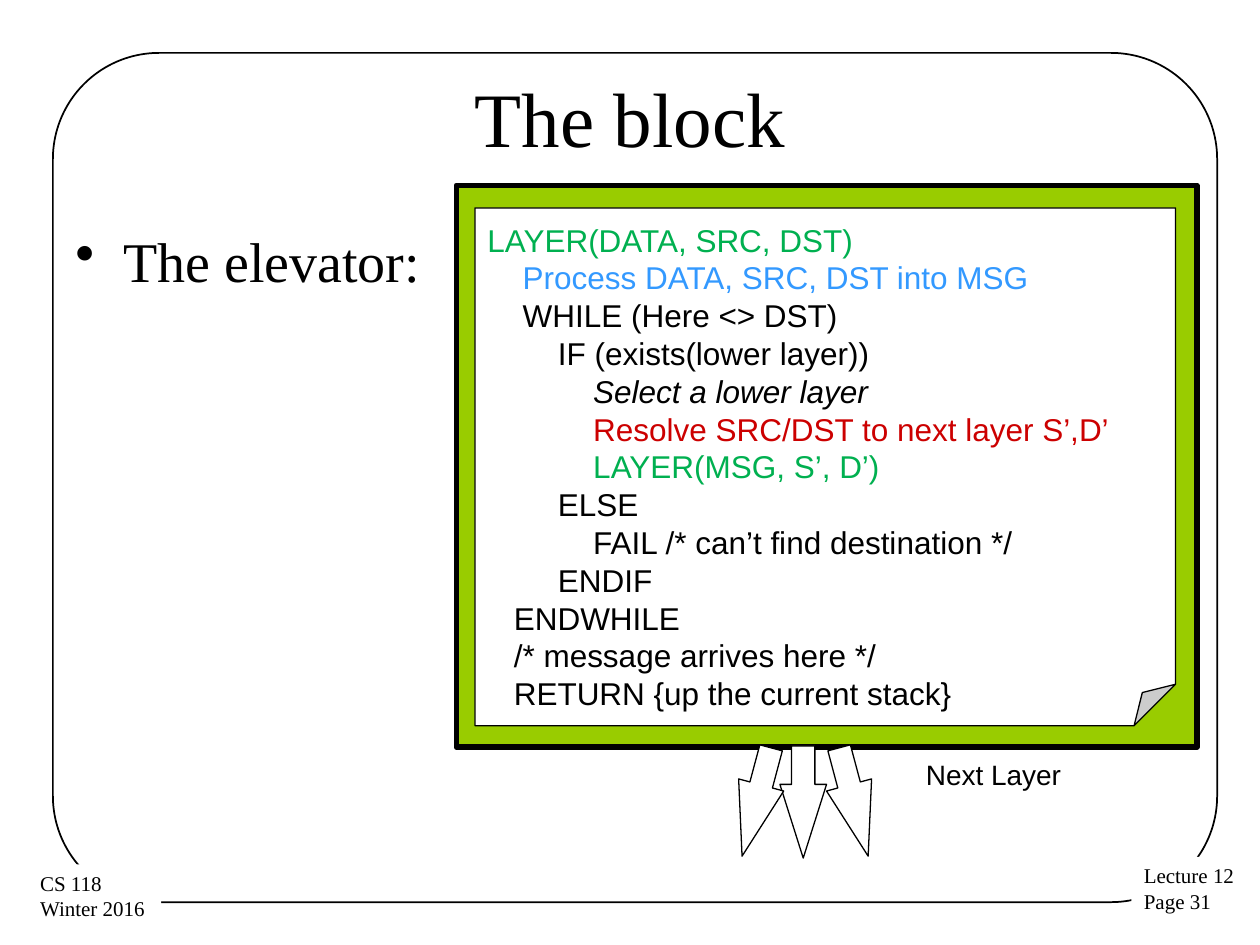
from lxml.etree import SubElement
from pptx import Presentation
from pptx.dml.color import RGBColor
from pptx.enum.shapes import MSO_SHAPE as Shape
from pptx.enum.text import MSO_ANCHOR as Anchor, PP_ALIGN as Align
from pptx.oxml.ns import qn
from pptx.util import Inches, Pt

BLACK = RGBColor(0x00, 0x00, 0x00)
WHITE = RGBColor(0xFF, 0xFF, 0xFF)
LIME = RGBColor(0x99, 0xCC, 0x00)
GREEN = RGBColor(0x00, 0xB0, 0x50)
BLUE = RGBColor(0x33, 0x99, 0xFF)
RED = RGBColor(0xCC, 0x00, 0x00)

SERIF = {"name": "Times New Roman", "color": BLACK}
SANS = {"name": "Arial", "color": BLACK}
SPACE_WIDTH = 0.07

PSEUDOCODE = [
    (0, "LAYER(DATA, SRC, DST)", {"color": GREEN}),
    (4, "Process DATA, SRC, DST into MSG", {"color": BLUE}),
    (4, "WHILE (Here <> DST)", {}),
    (8, "IF (exists(lower layer))", {}),
    (12, "Select a lower layer", {"italic": True}),
    (12, "Resolve SRC/DST to next layer S’,D’", {"color": RED}),
    (12, "LAYER(MSG, S’, D’)", {"color": GREEN}),
    (8, "ELSE", {}),
    (12, "FAIL /* can’t find destination */", {}),
    (8, "ENDIF", {}),
    (3, "ENDWHILE", {}),
    (3, "/* message arrives here */", {}),
    (3, "RETURN {up the current stack}", {}),
]
FOOTERS = [
    ((8.98, 6.8, 0.93, 0.51), ["Lecture 12", "Page 31"]),
    ((0.22, 6.86, 1.06, 0.51), ["CS 118", "Winter 2016"]),
]
ARROWS = [(6.19, 0), (5.82, 15), (6.59, 345)]


def set_guides(panel, guides):
    """Write the adjustment guides of a preset shape."""
    guide_list = panel._element.spPr.find(qn("a:prstGeom")).get_or_add_avLst()
    for old_guide in list(guide_list):
        guide_list.remove(old_guide)
    for name, value in guides.items():
        guide = SubElement(guide_list, qn("a:gd"))
        guide.set("name", name)
        guide.set("fmla", f"val {round(value * 100000)}")


def add_panel(slide, kind, box, fill=None, line_width=None, guides=None):
    """Add a preset shape with an optional fill and black outline."""
    panel = slide.shapes.add_shape(kind, *map(Inches, box))
    panel.shadow.inherit = False
    if guides:
        set_guides(panel, guides)
    if fill is None:
        panel.fill.background()
    else:
        panel.fill.solid()
        panel.fill.fore_color.rgb = fill
    if line_width is None:
        panel.line.fill.background()
    else:
        panel.line.color.rgb = BLACK
        panel.line.width = Pt(line_width)
    return panel


def write_lines(frame, lines, font_format, align=Align.LEFT):
    """Write one paragraph per (spaces, text, changes) line."""
    for index, (spaces, text, changes) in enumerate(lines):
        paragraph = frame.add_paragraph() if index else frame.paragraphs[0]
        paragraph.alignment = align
        if spaces:
            paragraph._p.get_or_add_pPr().set("marL", str(Inches(spaces * SPACE_WIDTH)))
        run = paragraph.add_run()
        run.text = text
        for key, value in {**font_format, **changes}.items():
            if key == "color":
                run.font.color.rgb = value
            else:
                setattr(run.font, key, value)


def add_label(slide, box, text, font_format, align=Align.LEFT, anchor=Anchor.TOP):
    """Add a wrapped one-line text box and return its paragraph."""
    frame = slide.shapes.add_textbox(*map(Inches, box)).text_frame
    frame.word_wrap = True
    frame.vertical_anchor = anchor
    write_lines(frame, [(0, text, {})], font_format, align)
    return frame.paragraphs[0]


def add_bullet(paragraph, indent):
    """Give a paragraph a round bullet with a hanging indent."""
    properties = paragraph._p.get_or_add_pPr()
    properties.set("marL", str(Inches(indent)))
    properties.set("indent", str(-Inches(indent)))
    SubElement(properties, qn("a:buChar")).set("char", "•")


def add_footer(slide, box, texts):
    """Add a white corner note that covers the slide border."""
    frame = add_panel(slide, Shape.RECTANGLE, box, WHITE).text_frame
    frame.word_wrap = False
    frame.vertical_anchor = Anchor.TOP
    write_lines(frame, [(0, text, {}) for text in texts], {**SERIF, "size": Pt(12)})


def add_code_sheet(slide, box):
    """Add the folded sheet that holds the pseudocode."""
    sheet = add_panel(slide, Shape.FOLDED_CORNER, box, WHITE, 0.75, {"adj": 0.08})
    frame = sheet.text_frame
    margin = Inches(0.1)
    layout = {"word_wrap": True, "vertical_anchor": Anchor.TOP,
              "margin_top": margin, "margin_bottom": margin}
    for key, value in layout.items():
        setattr(frame, key, value)
    write_lines(frame, PSEUDOCODE, {**SANS, "size": Pt(18)})


def main():
    """Build the slide and save it."""
    deck = Presentation()
    deck.slide_width, deck.slide_height = Inches(10), Inches(7.5)
    slide = deck.slides.add_slide(deck.slide_layouts[6])

    add_panel(slide, Shape.ROUNDED_RECTANGLE, (0.42, 0.42, 9.24, 6.74),
              line_width=1, guides={"adj": 0.125})
    for box, texts in FOOTERS:
        add_footer(slide, box, texts)

    add_label(slide, (0.5, 0.3, 9, 1.25), "The block", {**SERIF, "size": Pt(44)},
              Align.CENTER, Anchor.MIDDLE)
    topic = add_label(slide, (0.5, 1.75, 9, 4.95), "The elevator:",
                      {**SERIF, "size": Pt(32)})
    topic.space_before = Pt(6)
    add_bullet(topic, 0.38)

    add_panel(slide, Shape.RECTANGLE, (3.62, 1.47, 5.88, 4.46), LIME, 3)
    for left, angle in ARROWS:
        arrow = add_panel(slide, Shape.DOWN_ARROW, (left, 5.92, 0.37, 0.89),
                          WHITE, 0.75, {"adj1": 0.5, "adj2": 1.58})
        arrow.rotation = angle
    add_label(slide, (6.67, 5.96, 2.43, 0.87), "Next Layer",
              {**SANS, "size": Pt(16)}, Align.CENTER)
    add_code_sheet(slide, (3.77, 1.65, 5.56, 4.11))

    deck.save("out.pptx")


if __name__ == "__main__":
    main()
